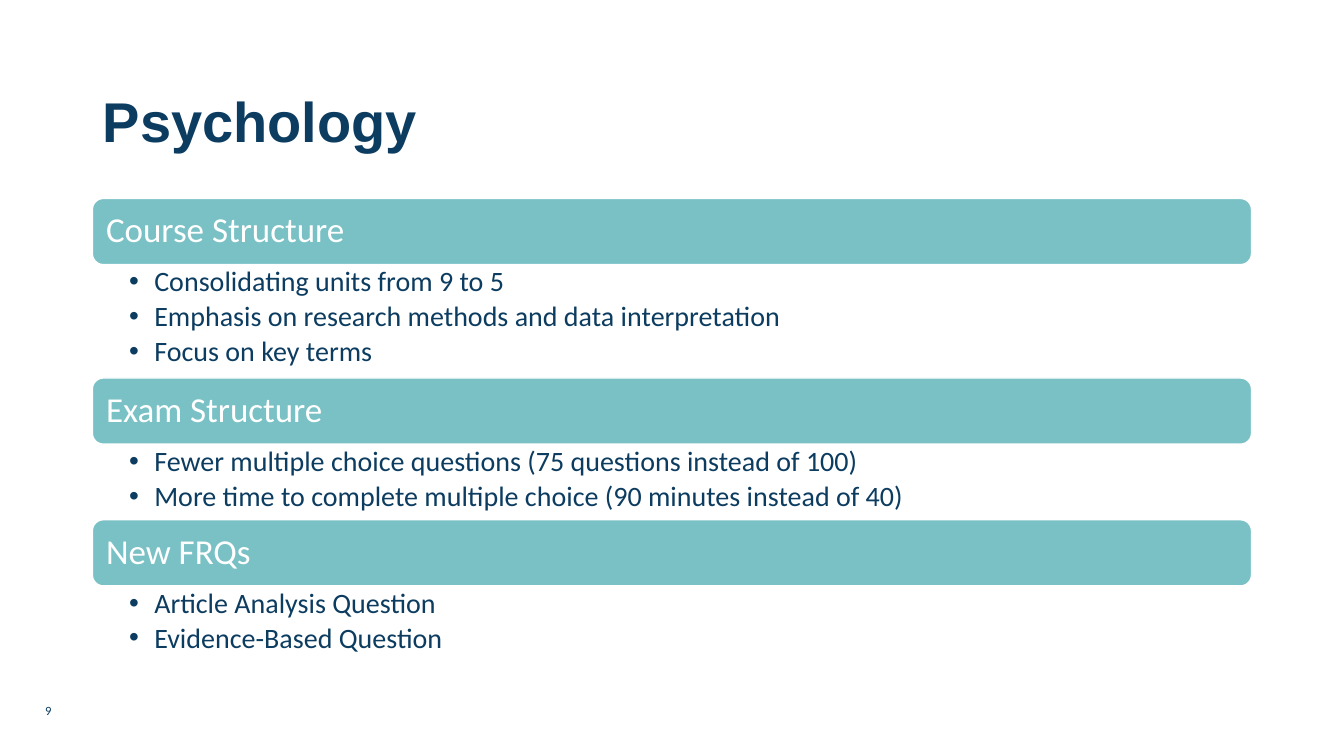
from lxml import etree
from pptx import Presentation
from pptx import util as u
from pptx.dml.color import RGBColor
from pptx.enum import shapes, text
from pptx.oxml.ns import qn

PX = 9525
COLORS = {"navy": "0C3C60", "teal": "79C1C5", "white": "FFFFFF"}
BAR_H, LINE_H = 63, 36
SECTIONS = [
    ("Course Structure", [
        "Consolidating units from 9 to 5",
        "Emphasis on research methods and data interpretation",
        "Focus on key terms",
    ]),
    ("Exam Structure", [
        "Fewer multiple choice questions (75 questions instead of 100)",
        "More time to complete multiple choice (90 minutes instead of 40)",
    ]),
    ("New FRQs", ["Article Analysis Question", "Evidence-Based Question"]),
]


def px(*lengths):
    return [u.Emu(n * PX) for n in lengths]


def rgb(name):
    return RGBColor.from_string(COLORS[name])


def apply(obj, **formats):
    for name, value in formats.items():
        setattr(obj, name, value)


def set_frame(tf, insets, anchor):
    left, top, right, bottom = px(*insets)
    apply(tf, word_wrap=True, auto_size=text.MSO_AUTO_SIZE.NONE,
          vertical_anchor=anchor, margin_left=left, margin_top=top,
          margin_right=right, margin_bottom=bottom)


def write(p, words, size, color, font="Calibri", bold=False, spacing=0.9, after=0):
    apply(p, alignment=text.PP_ALIGN.LEFT, line_spacing=spacing,
          space_before=u.Pt(0), space_after=u.Pt(after))
    r = p.add_run()
    r.text = words
    apply(r.font, size=u.Pt(size), name=font, bold=bold)
    r.font.color.rgb = rgb(color)


def add_bullet(p):
    pPr = p._p.get_or_add_pPr()
    pPr.set("marL", str(24 * PX))
    pPr.set("indent", str(-24 * PX))
    etree.SubElement(pPr, qn("a:buFont")).set("typeface", "Arial")
    etree.SubElement(pPr, qn("a:buChar")).set("char", "•")


def add_title(s, box):
    sp = s.shapes.title
    apply(sp, **dict(zip(("left", "top", "width", "height"), px(*box))))
    set_frame(sp.text_frame, (10, 5, 10, 5), text.MSO_ANCHOR.MIDDLE)
    write(sp.text_frame.paragraphs[0], "Psychology", 40, "navy", "Arial", True)


def add_number(s, box):
    tf = s.shapes.add_textbox(*px(*box)).text_frame
    set_frame(tf, (10, 5, 10, 5), text.MSO_ANCHOR.TOP)
    write(tf.paragraphs[0], "9", 9, "navy", spacing=1.0)


def add_bar(s, box, heading):
    sp = s.shapes.add_shape(shapes.MSO_SHAPE.ROUNDED_RECTANGLE, *px(*box))
    sp.shadow.inherit = False
    sp.fill.solid()
    sp.fill.fore_color.rgb = rgb("teal")
    sp.line.color.rgb = rgb("white")
    sp.line.width = u.Pt(1)
    set_frame(sp.text_frame, (10, 10, 10, 10), text.MSO_ANCHOR.MIDDLE)
    write(sp.text_frame.paragraphs[0], heading, 25, "white")


def add_list(s, box, items):
    tf = s.shapes.add_textbox(*px(*box)).text_frame
    set_frame(tf, (35, 3, 18, 3), text.MSO_ANCHOR.TOP)
    for i, item in enumerate(items):
        p = tf.add_paragraph() if i else tf.paragraphs[0]
        add_bullet(p)
        write(p, item, 20, "navy", after=3.3)


def add_sections(s, left, top, width):
    for heading, items in SECTIONS:
        list_h = LINE_H * len(items)
        add_bar(s, (left, top, width, BAR_H), heading)
        add_list(s, (left, top + BAR_H, width, list_h), items)
        top += BAR_H + list_h


def main():
    prs = Presentation()
    prs.slide_width, prs.slide_height = px(1280, 720)
    s = prs.slides.add_slide(prs.slide_layouts[5])
    add_title(s, (88, 71, 1104, 94))
    add_number(s, (33, 664, 216, 22))
    add_sections(s, 88, 189, 1104)
    prs.save("out.pptx")


if __name__ == "__main__":
    main()
